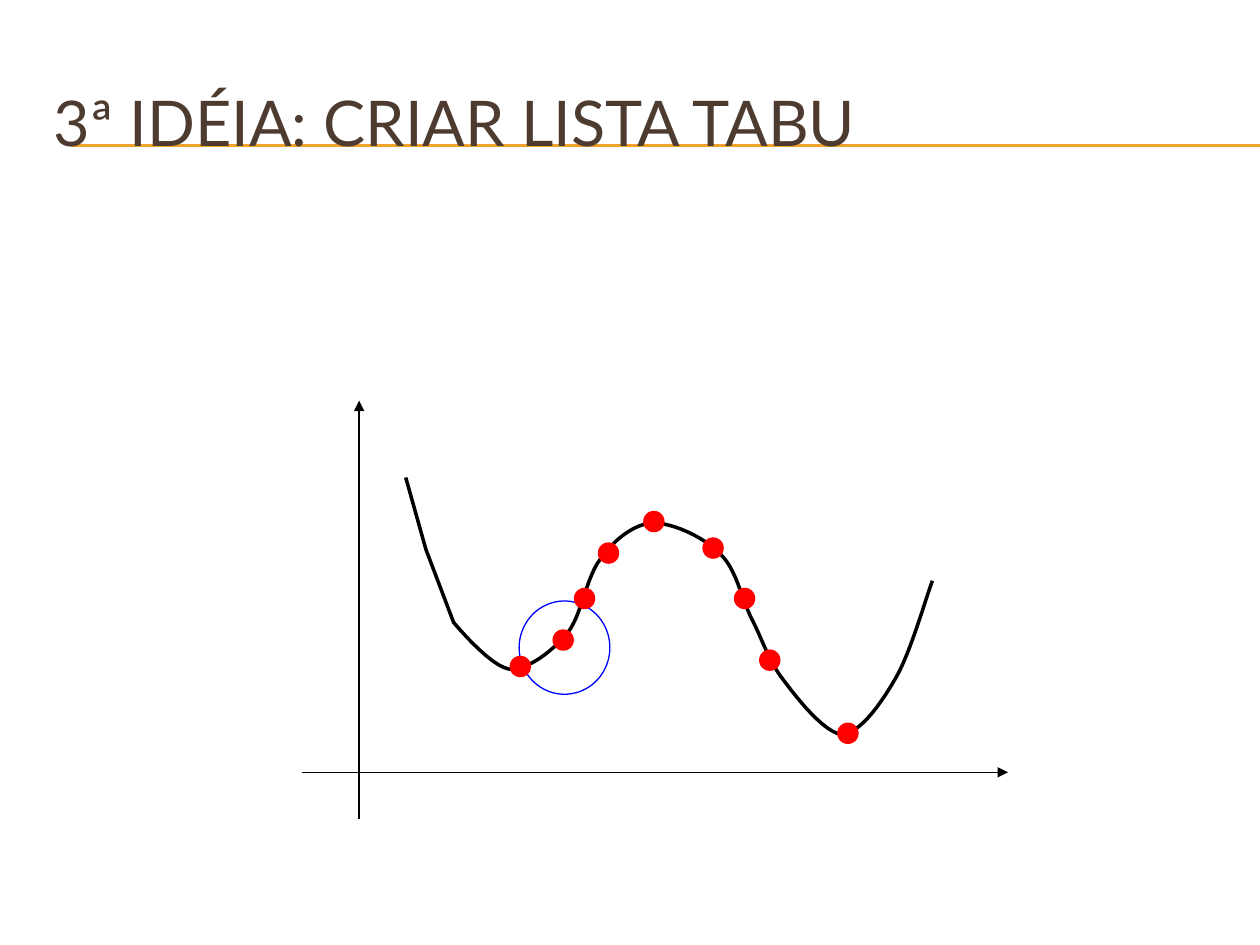
from typing import NamedTuple

from lxml import etree
from pptx import Presentation
from pptx.dml.color import RGBColor
from pptx.enum.shapes import MSO_CONNECTOR, MSO_SHAPE
from pptx.enum.text import MSO_ANCHOR
from pptx.oxml.ns import qn
from pptx.util import Inches, Pt

OVAL = MSO_SHAPE.OVAL
STRAIGHT = MSO_CONNECTOR.STRAIGHT
MIDDLE = MSO_ANCHOR.MIDDLE

BLACK, WHITE, RED, BLUE = "000000", "FFFFFF", "FF0000", "0000FF"
GOLD, BROWN = "F0A22E", "4E3B30"
DOT = 0.16
STEPS = 12


class Point(NamedTuple):
    x: float
    y: float


class Bend(NamedTuple):
    """A cubic curve piece: two control points and its end."""
    first: Point
    second: Point
    end: Point


START = Point(3.22, 3.79)
KNEES = [Point(3.38, 4.36), Point(3.6, 4.94)]
BENDS = [Bend(Point(*a), Point(*b), Point(*c)) for a, b, c in [
    ((3.6, 4.94), (3.89, 5.29), (4.04, 5.31)),
    ((4.19, 5.32), (4.38, 5.17), (4.5, 5.03)),
    ((4.62, 4.88), (4.65, 4.58), (4.77, 4.43)),
    ((4.88, 4.28), (5.03, 4.16), (5.18, 4.15)),
    ((5.34, 4.15), (5.58, 4.26), (5.71, 4.39)),
    ((5.84, 4.51), (5.88, 4.73), (5.96, 4.9)),
    ((6.05, 5.07), (6.1, 5.25), (6.22, 5.4)),
    ((6.34, 5.56), (6.54, 5.81), (6.68, 5.83)),
    ((6.81, 5.82), (6.96, 5.64), (7.11, 5.38)),
    ((7.23, 5.17), (7.34, 4.77), (7.4, 4.61)),
]]
DOTS = [Point(*p) for p in [
    (4.05, 5.21), (4.39, 5), (4.56, 4.67), (4.75, 4.31), (5.11, 4.06),
    (5.58, 4.27), (5.83, 4.67), (6.03, 5.16), (6.65, 5.74),
]]


def color(code: str) -> RGBColor:
    return RGBColor.from_string(code)


def add_text(shapes, text: str, x: float, y: float, w: float, h: float, *,
             size: float, font: str, ink: str) -> None:
    frame = shapes.add_textbox(Inches(x), Inches(y), Inches(w), Inches(h)).text_frame
    frame.word_wrap = True
    frame.vertical_anchor = MIDDLE
    run = frame.paragraphs[0].add_run()
    run.text = text
    run.font.size = Pt(size)
    run.font.name = font
    run.font.color.rgb = color(ink)


def add_line(shapes, a: Point, b: Point, ink: str, arrow: bool = False) -> None:
    line = shapes.add_connector(STRAIGHT, Inches(a.x), Inches(a.y), Inches(b.x), Inches(b.y))
    line.line.color.rgb = color(ink)
    line.line.width = Pt(0.75)
    if arrow:
        etree.SubElement(line.line._get_or_add_ln(), qn("a:tailEnd"), type="triangle")
    etree.SubElement(line._element.spPr, qn("a:effectLst"))


def add_oval(shapes, at: Point, w: float, h: float, fill: str, ink: str) -> None:
    oval = shapes.add_shape(OVAL, Inches(at.x), Inches(at.y), Inches(w), Inches(h))
    oval.shadow.inherit = False
    oval.fill.solid()
    oval.fill.fore_color.rgb = color(fill)
    oval.line.color.rgb = color(ink)
    oval.line.width = Pt(0.75)


def trace(start: Point, bend: Bend) -> list[Point]:
    """Sample a cubic curve at equal steps, leaving out its start."""
    points = []
    for step in range(1, STEPS + 1):
        t = step / STEPS
        u = 1 - t
        parts = (u ** 3, 3 * u * u * t, 3 * u * t * t, t ** 3)
        points.append(Point(*(sum(k * v for k, v in zip(parts, axis))
                              for axis in zip(start, *bend))))
    return points


def add_curve(shapes) -> None:
    points = list(KNEES)
    for bend in BENDS:
        points += trace(points[-1], bend)
    pen = shapes.build_freeform(Inches(START.x), Inches(START.y))
    pen.add_line_segments([(Inches(p.x), Inches(p.y)) for p in points], close=False)
    curve = pen.convert_to_shape()
    curve.shadow.inherit = False
    curve.fill.background()
    curve.line.color.rgb = color(BLACK)
    curve.line.width = Pt(2)


def main() -> None:
    deck = Presentation()
    deck.slide_width, deck.slide_height = Inches(10), Inches(7.5)
    shapes = deck.slides.add_slide(deck.slide_layouts[6]).shapes

    for y in (1.15, 1.16):
        add_line(shapes, Point(0.56, y), Point(10, y), GOLD)
    add_text(shapes, "3ª IDÉIA: CRIAR LISTA TABU", 0.33, 0.5, 9.5, 0.92,
             size=36, font="Lato", ink=BROWN)

    graph = shapes.add_group_shape().shapes
    add_oval(graph, Point(4.12, 4.77), 0.72, 0.74, WHITE, BLUE)
    add_line(graph, Point(2.85, 6.5), Point(2.85, 3.18), BLACK, arrow=True)
    add_curve(graph)
    add_line(graph, Point(2.4, 6.13), Point(8, 6.13), BLACK, arrow=True)
    for dot in DOTS:
        add_oval(graph, dot, DOT, DOT, RED, RED)

    deck.save("out.pptx")


if __name__ == "__main__":
    main()
